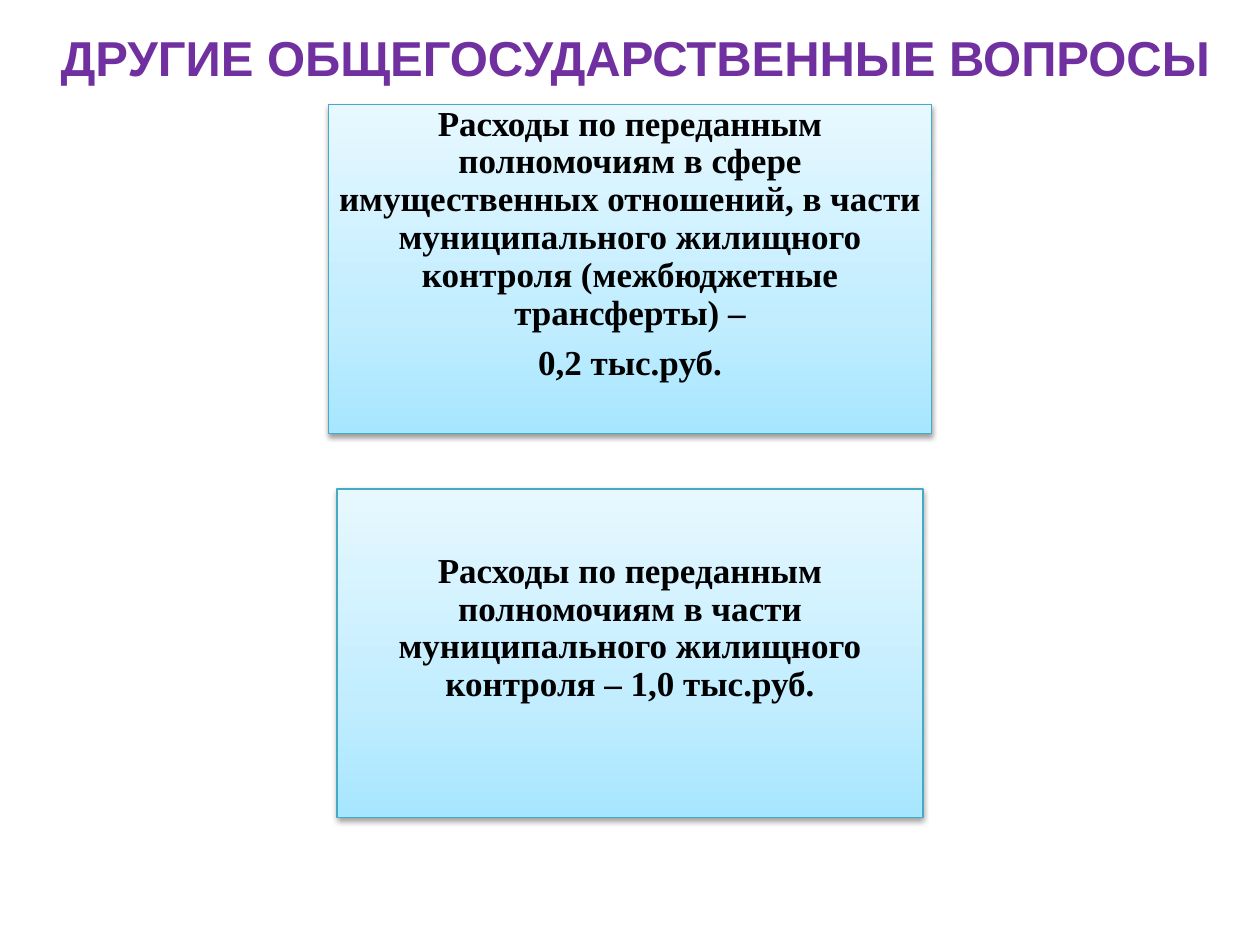
from copy import deepcopy
from dataclasses import dataclass

from lxml.etree import SubElement
from pptx import Presentation
from pptx.dml.color import RGBColor
from pptx.enum.shapes import MSO_SHAPE
from pptx.enum.text import MSO_ANCHOR, MSO_AUTO_SIZE, PP_ALIGN
from pptx.oxml.ns import qn
from pptx.util import Inches, Pt


@dataclass(frozen=True)
class Theme:
    title_color: str = "7030A0"
    text_color: str = "000000"
    border_color: str = "46AAC5"
    gradient: tuple = ((0, "A7E6FF"), (0.35, "C1EDFF"), (1, "E7F8FF"))
    title_font: str = "Arial"
    body_font: str = "Times New Roman"
    title_size: int = 28
    body_size: int = 20


THEME = Theme()
COLUMNS, ROWS = 100, 75
CELL = Inches(0.1)

TITLE = "ДРУГИЕ ОБЩЕГОСУДАРСТВЕННЫЕ ВОПРОСЫ"
TRANSFERS = [
    "Расходы по переданным полномочиям в сфере имущественных отношений, "
    "в части муниципального жилищного контроля (межбюджетные трансферты) –",
    "0,2 тыс.руб.",
]
HOUSING_CONTROL = [
    "Расходы по переданным полномочиям в части муниципального "
    "жилищного контроля – 1,0 тыс.руб.",
]


def grid(*cells):
    return [round(cell * CELL) for cell in cells]


def write(frame, lines, *, font, size, color, spacing=None, after=None, outline=None):
    """Fill a frame with bold centred paragraphs, one for each line."""
    frame.word_wrap = True
    for index, line in enumerate(lines):
        para = frame.paragraphs[0] if index == 0 else frame.add_paragraph()
        para.alignment = PP_ALIGN.CENTER
        para.line_spacing = spacing
        para.space_after = after
        span = para.add_run()
        span.text = line
        span.font.name = font
        span.font.size = Pt(size)
        span.font.bold = True
        span.font.color.rgb = RGBColor.from_string(color)
        if outline:
            outline_text(span, outline, color)


def outline_text(span, width, color):
    properties = span.font._element
    line = properties.makeelement(qn("a:ln"), {"w": str(Pt(width))})
    properties.insert(0, line)
    fill = SubElement(line, qn("a:solidFill"))
    SubElement(fill, qn("a:srgbClr"), val=color)


def fill_gradient(shape, stops):
    """Fill from bottom to top with three colour stops."""
    shape.fill.gradient()
    shape.fill.gradient_angle = 90
    stop_list = shape._element.spPr.find(".//" + qn("a:gsLst"))
    stop_list.insert(1, deepcopy(stop_list[0]))
    for stop, (position, color) in zip(shape.fill.gradient_stops, stops):
        stop.position = position
        stop.color.rgb = RGBColor.from_string(color)


def add_soft_shadow(shape):
    shape.shadow.inherit = False
    effects = shape._element.spPr.find(qn("a:effectLst"))
    shadow = SubElement(
        effects, qn("a:outerShdw"), blurRad=str(Pt(3.1)), dist=str(Pt(1.6)),
        dir="5400000", rotWithShape="0",
    )
    color = SubElement(shadow, qn("a:srgbClr"), val="000000")
    SubElement(color, qn("a:alpha"), val="38000")


def add_title(slide, text):
    box = slide.shapes.add_textbox(*grid(2.5, 1.7, 95.8, 5.7))
    write(box.text_frame, [text], font=THEME.title_font, size=THEME.title_size,
          color=THEME.title_color, outline=0.83)
    box.text_frame.auto_size = MSO_AUTO_SIZE.SHAPE_TO_FIT_TEXT


def add_expense_box(slide, lines, *, top, width, text_top, height=26.1):
    """Add a horizontally centred box; its text starts text_top rows down."""
    left = (COLUMNS - width) / 2
    box = slide.shapes.add_shape(MSO_SHAPE.RECTANGLE, *grid(left, top, width, height))
    fill_gradient(box, THEME.gradient)
    box.line.color.rgb = RGBColor.from_string(THEME.border_color)
    box.line.width = Pt(0.75)
    add_soft_shadow(box)
    frame = box.text_frame
    frame.vertical_anchor = MSO_ANCHOR.TOP
    frame.margin_left = frame.margin_right = frame.margin_bottom = Inches(0.08)
    frame.margin_top = round(text_top * CELL)
    write(frame, lines, font=THEME.body_font, size=THEME.body_size,
          color=THEME.text_color, spacing=0.9, after=Pt(7))


def main():
    deck = Presentation()
    deck.slide_width, deck.slide_height = grid(COLUMNS, ROWS)
    slide = deck.slides.add_slide(deck.slide_layouts[6])
    add_title(slide, TITLE)
    add_expense_box(slide, TRANSFERS, top=8.3, width=47.9, text_top=0.1)
    add_expense_box(slide, HOUSING_CONTROL, top=38.8, width=46.5, text_top=5.1)
    deck.save("out.pptx")


if __name__ == "__main__":
    main()
